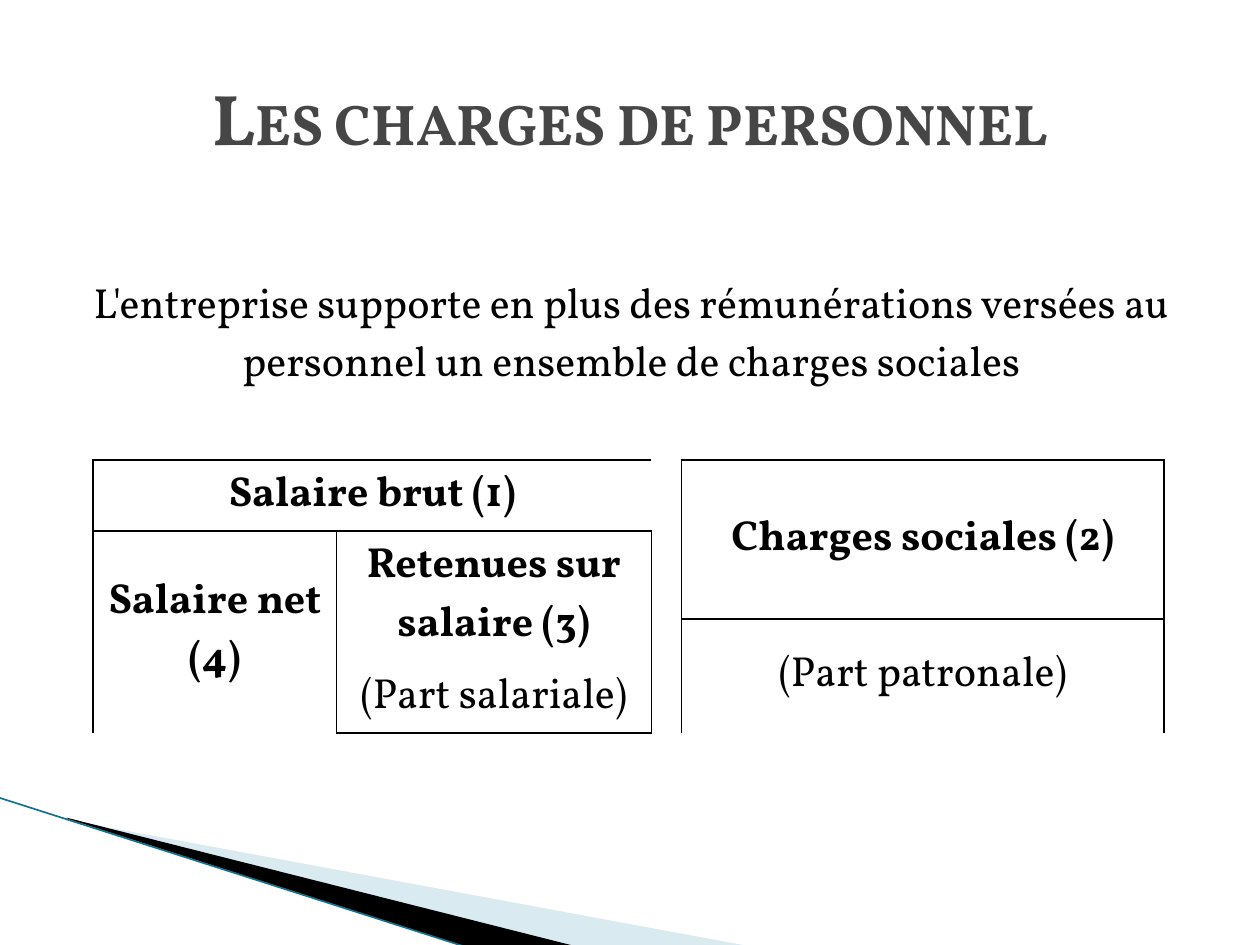
import dataclasses

import lxml.etree
import pptx
import pptx.dml.color
import pptx.enum.shapes
import pptx.enum.text
import pptx.oxml.ns
import pptx.slide
import pptx.table
import pptx.util

Inches = pptx.util.Inches
Pt = pptx.util.Pt
RGBColor = pptx.dml.color.RGBColor
Anchor = pptx.enum.text.MSO_ANCHOR
qn = pptx.oxml.ns.qn

FONT = "Vollkorn"
BLACK = RGBColor(0x00, 0x00, 0x00)
TITLE_GREY = RGBColor(0x46, 0x46, 0x46)
PALE_BLUE = RGBColor(0xA0, 0xCB, 0xDC)
TEAL = RGBColor(0x17, 0x71, 0x8A)
NO_STYLE = "{2D5ABB26-0587-4C30-8999-92F81FD0307C}"
COLUMN_WIDTHS = (0.23, 1.93, 2.5, 0.23, 3.83, 0.28)
ROW_HEIGHTS = (1.49, 0.56, 0.7, 0.34, 0.56, 0.41, 0.41)


@dataclasses.dataclass
class Wedge:
    frame: tuple[float, float, float, float]
    points: tuple[tuple[float, float], ...]
    color: RGBColor
    opacity: int = 100


@dataclasses.dataclass
class Block:
    text: str
    row: int
    column: int
    rows: int = 1
    columns: int = 1
    bold: bool = False
    borders: str = "LRTB"
    anchor: Anchor = Anchor.MIDDLE


WEDGES = (
    Wedge((0.78, 5.47, 4.16, 1.58),
          ((0.55, 6.51), (5.95, 7.51), (4.56, 7.51), (0.55, 6.5)), PALE_BLUE, 40),
    Wedge((-0.06, 6.33, 4.16, 0.92),
          ((0.53, 6.49), (4.57, 7.51), (3.72, 7.52), (0.54, 6.5)), BLACK),
)

BLOCKS = (
    Block("L'entreprise supporte en plus des rémunérations versées au personnel "
          "un ensemble de charges sociales", 0, 0, columns=6, borders="", anchor=Anchor.TOP),
    Block("Salaire brut (1)", 1, 1, columns=2, bold=True),
    Block("Charges sociales (2)", 1, 4, rows=2, bold=True),
    Block("Salaire net (4)", 2, 1, rows=3, bold=True),
    Block("Retenues sur salaire (3)", 2, 2, rows=2, bold=True, borders="LRT"),
    Block("(Part patronale)", 3, 4, rows=2),
    Block("(Part salariale)", 4, 2, borders="LRB"),
)


def draw_wedge(slide: pptx.slide.Slide, wedge: Wedge) -> None:
    points = [(Inches(x), Inches(y)) for x, y in wedge.points]
    builder = slide.shapes.build_freeform(*points[0])
    builder.add_line_segments(points[1:], close=True)
    shape = builder.convert_to_shape()
    shape.shadow.inherit = False
    shape.fill.solid()
    shape.fill.fore_color.rgb = wedge.color
    shape.line.fill.background()
    if wedge.opacity < 100:
        color = shape.fill._xPr.find(qn("a:solidFill"))[0]
        lxml.etree.SubElement(color, qn("a:alpha"), val=str(wedge.opacity * 1000))

    # The outline reaches beyond its frame
    left, top, width, height = (Inches(length) for length in wedge.frame)
    outline = next(shape._element.iter(qn("a:path")))
    outline.set("w", str(width))
    outline.set("h", str(height))
    for point in outline.iter(qn("a:pt")):
        point.set("x", str(int(point.get("x")) + shape.left - left))
        point.set("y", str(int(point.get("y")) + shape.top - top))
    shape.left, shape.top, shape.width, shape.height = left, top, width, height


def add_border(cell: pptx.table._Cell, side: str, visible: bool) -> None:
    properties = cell._tc.get_or_add_tcPr()
    line = lxml.etree.SubElement(properties, qn(f"a:ln{side}"), w=str(Pt(1)))
    if visible:
        fill = lxml.etree.SubElement(line, qn("a:solidFill"))
        lxml.etree.SubElement(fill, qn("a:srgbClr"), val=str(BLACK))
    else:
        lxml.etree.SubElement(line, qn("a:noFill"))


def fill_block(table: pptx.table.Table, block: Block) -> None:
    last_row = block.row + block.rows - 1
    last_column = block.column + block.columns - 1
    cell = table.cell(block.row, block.column)
    if block.rows * block.columns > 1:
        cell.merge(table.cell(last_row, last_column))

    cell.text = block.text
    cell.vertical_anchor = block.anchor
    paragraph = cell.text_frame.paragraphs[0]
    paragraph.alignment = pptx.enum.text.PP_ALIGN.CENTER
    paragraph.font.name = FONT
    paragraph.font.size = Pt(24)
    paragraph.font.bold = block.bold
    paragraph.font.color.rgb = BLACK

    # Outline the merged area, cell by cell
    for row in range(block.row, last_row + 1):
        for column in range(block.column, last_column + 1):
            edges = {"L": column == block.column, "R": column == last_column,
                     "T": row == block.row, "B": row == last_row}
            for side, on_edge in edges.items():
                add_border(table.cell(row, column), side, on_edge and side in block.borders)


def main() -> None:
    presentation = pptx.Presentation()
    presentation.slide_width = Inches(10)
    presentation.slide_height = Inches(7.5)
    slide = presentation.slides.add_slide(presentation.slide_layouts[5])

    # Corner decoration
    for wedge in WEDGES:
        draw_wedge(slide, wedge)
    line = slide.shapes.add_connector(
        pptx.enum.shapes.MSO_CONNECTOR.STRAIGHT,
        Inches(-0.01), Inches(6.33), Inches(3.71), Inches(7.52))
    line.line.color.rgb = TEAL
    line.line.width = Pt(0.95)
    lxml.etree.SubElement(line._element.spPr, qn("a:effectLst"))

    # Title
    title = slide.shapes.title
    title.left, title.top = Inches(0.5), Inches(0.3)
    title.width, title.height = Inches(9), Inches(1.25)
    title.text_frame.text = "Les charges de personnel"
    title.text_frame.auto_size = pptx.enum.text.MSO_AUTO_SIZE.NONE
    title.text_frame.vertical_anchor = Anchor.MIDDLE
    paragraph = title.text_frame.paragraphs[0]
    paragraph.alignment = pptx.enum.text.PP_ALIGN.CENTER
    paragraph.font.name = FONT
    paragraph.font.size = Pt(41)
    paragraph.font.bold = True
    paragraph.font.color.rgb = TITLE_GREY
    paragraph.runs[0]._r.get_or_add_rPr().set("cap", "small")

    # Table of salary and social charges
    frame = slide.shapes.add_table(
        len(ROW_HEIGHTS), len(COLUMN_WIDTHS), Inches(0.5), Inches(2.16),
        Inches(sum(COLUMN_WIDTHS)), Inches(sum(ROW_HEIGHTS)))
    table = frame.table
    table.first_row = table.horz_banding = False
    table._tbl.tblPr.find(qn("a:tableStyleId")).text = NO_STYLE
    for column, width in zip(table.columns, COLUMN_WIDTHS):
        column.width = Inches(width)
    for row, height in zip(table.rows, ROW_HEIGHTS):
        row.height = Inches(height)
    for block in BLOCKS:
        fill_block(table, block)
    for cell in table.iter_cells():
        cell.fill.background()
        if not cell.text:
            # Empty cells must not stretch their row
            cell.margin_top = cell.margin_bottom = 0
            cell.text_frame.paragraphs[0].font.size = Pt(10)

    presentation.save("out.pptx")


if __name__ == "__main__":
    main()
